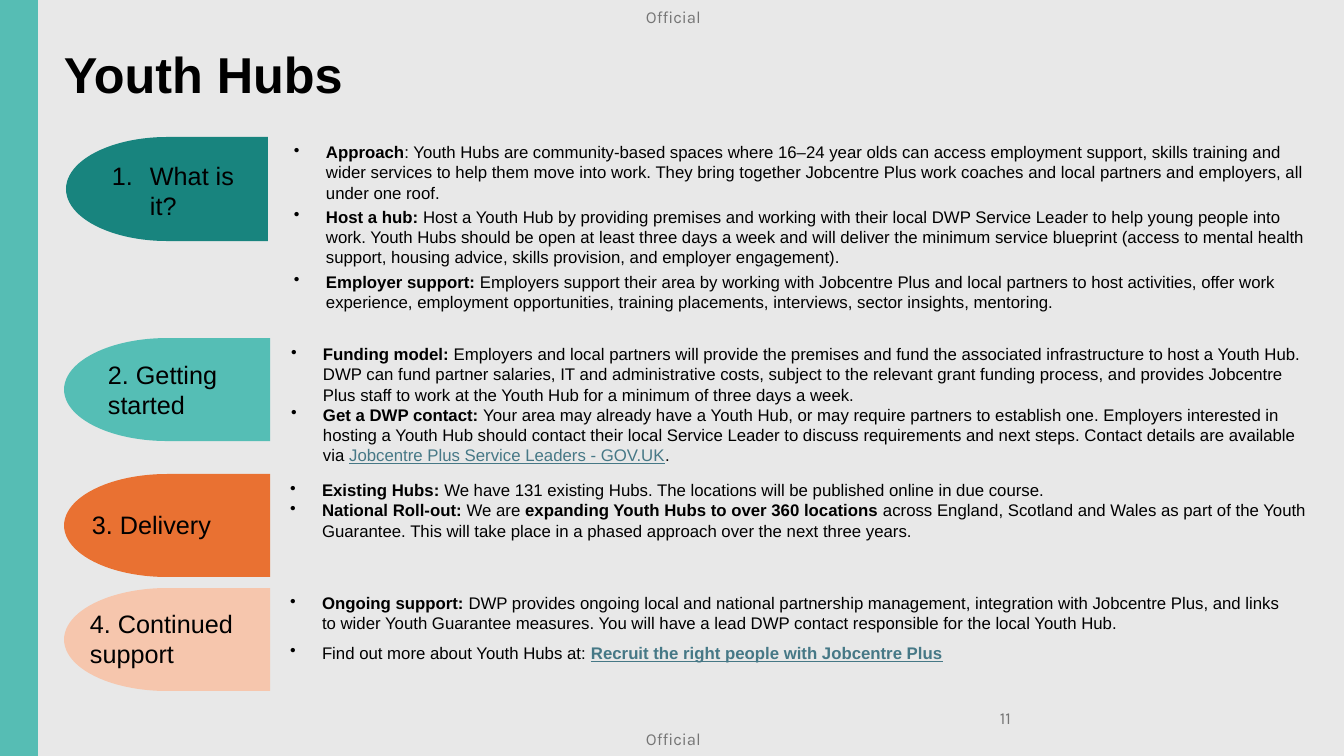
"""Build the Youth Hubs slide with its four labelled sections."""
from lxml.etree import SubElement
from pptx import Presentation
from pptx.dml.color import RGBColor
from pptx.enum.shapes import MSO_SHAPE
from pptx.enum.text import MSO_ANCHOR
from pptx.oxml.ns import qn
from pptx.util import Emu, Pt

PX = 914400 / 100.8
BACKGROUND = RGBColor(0xE8, 0xE8, 0xE8)
BLACK = RGBColor(0x00, 0x00, 0x00)
GREY = RGBColor(0x75, 0x75, 0x75)
LINK = RGBColor(0x46, 0x78, 0x86)
BAND = RGBColor(0x56, 0xBD, 0xB4)
DARK_TEAL = RGBColor(0x18, 0x84, 0x7E)
TEAL = RGBColor(0x55, 0xBE, 0xB5)
ORANGE = RGBColor(0xE9, 0x71, 0x32)
PEACH = RGBColor(0xF6, 0xC6, 0xAD)


def add_block(page, frame, color, kind=MSO_SHAPE.RECTANGLE):
    """Add a plain filled shape and return it."""
    block = page.shapes.add_shape(kind, *[Emu(round(n * PX)) for n in frame])
    block.shadow.inherit = False
    block.fill.solid()
    block.fill.fore_color.rgb = color
    block.line.fill.background()
    return block


def add_text(page, frame, paragraphs, size, font="Arial", color=BLACK, inset=(10, 5),
             bullet=None, indent=32, gap=0):
    """Add a text box whose paragraphs are lists of (text, style) spans."""
    box = page.shapes.add_textbox(*[Emu(round(n * PX)) for n in frame])
    text = box.text_frame
    text.word_wrap = True
    text.margin_left = text.margin_right = Emu(round(inset[0] * PX))
    text.margin_top = text.margin_bottom = Emu(round(inset[1] * PX))
    for index, spans in enumerate(paragraphs):
        para = text.paragraphs[0] if index == 0 else text.add_paragraph()
        if index and gap:
            para.space_before = Pt(gap)
        if bullet:
            properties = para._p.get_or_add_pPr()
            properties.set("marL", str(round(indent * PX)))
            properties.set("indent", str(-round(indent * PX)))
            tag, attribute, value = bullet
            SubElement(properties, qn(tag)).set(attribute, value)
        para.font.size = Pt(size)
        para.font.name = font
        para.font.color.rgb = color
        for words, style in spans:
            span = para.add_run()
            span.text = words
            if "bold" in style:
                span.font.bold = True
            if "link" in style:
                span.font.underline = True
                span.font.color.rgb = LINK
    return box


DOT = ("a:buChar", "char", "•")
NUMBER = ("a:buAutoNum", "type", "arabicPeriod")

sections = [
    {"tab": (66, 137, 202, 104), "color": DARK_TEAL,
     "label": "What is it?", "label_at": (102, 155, 162, 72), "bullet": NUMBER,
     "body_at": (284, 137, 1037, 119), "gap": 3,
     "body": [
         [("Approach", "bold"),
          (": Youth Hubs are community‑based spaces where 16–24 year olds can access employment "
           "support, skills training and wider services to help them move into work. They bring "
           "together Jobcentre Plus work coaches and local partners and employers, all under one "
           "roof.", "")],
         [("Host a hub: ", "bold"),
          ("Host a Youth Hub by providing premises and working with their local DWP Service Leader "
           "to help young people into work. Youth Hubs should be open at least three days a week "
           "and will deliver the minimum service blueprint (access to mental health support, "
           "housing advice, skills provision, and employer engagement).", "")],
         [("Employer support: ", "bold"),
          ("Employers support their area by working with Jobcentre Plus and local partners to host "
           "activities, offer work experience, employment opportunities, training placements, "
           "interviews, sector insights, mentoring.", "")],
     ]},
    {"tab": (64, 338, 206, 103), "color": TEAL,
     "label": "2. Getting started", "label_at": (98, 354, 162, 72), "bullet": None,
     "body_at": (281, 339, 1039, 132), "gap": 0,
     "body": [
         [("Funding model: ", "bold"),
          ("Employers and local partners will provide the premises and fund the associated "
           "infrastructure to host a Youth Hub. DWP can fund partner salaries, IT and "
           "administrative costs, subject to the relevant grant funding process, and provides "
           "Jobcentre Plus staff to work at the Youth Hub for a minimum of three days a week.", "")],
         [("Get a DWP contact: ", "bold"),
          ("Your area may already have a Youth Hub, or may require partners to establish one. "
           "Employers interested in hosting a Youth Hub should contact their local Service Leader "
           "to discuss requirements and next steps. Contact details are available via ", ""),
          ("Jobcentre Plus Service Leaders - GOV.UK", "link"), (".", "")],
     ]},
    {"tab": (64, 474, 206, 103), "color": ORANGE,
     "label": "3. Delivery", "label_at": (82, 504, 202, 40), "bullet": None,
     "body_at": (280, 475, 1044, 72), "gap": 0,
     "body": [
         [("Existing Hubs: ", "bold"),
          ("We have 131 existing Hubs. The locations will be published online in due course.", "")],
         [("National Roll-out: ", "bold"), ("We are ", ""),
          ("expanding Youth Hubs to over 360 locations ", "bold"),
          ("across England, Scotland and Wales as part of the Youth Guarantee. This will take "
           "place in a phased approach over the next three years.", "")],
     ]},
    {"tab": (64, 588, 206, 103), "color": PEACH,
     "label": "4. Continued support", "label_at": (80, 603, 202, 72), "bullet": None,
     "body_at": (280, 588, 1024, 82), "gap": 6.5,
     "body": [
         [("Ongoing support: ", "bold"),
          ("DWP provides ongoing local and national partnership management, integration with "
           "Jobcentre Plus, and links to wider Youth Guarantee measures. You will have a lead DWP "
           "contact responsible for the local Youth Hub.", "")],
         [("Find out more about Youth Hubs at: ", ""),
          ("Recruit the right people with Jobcentre Plus", "bold link")],
     ]},
]

deck = Presentation()
deck.slide_width = Emu(round(1344 * PX))
deck.slide_height = Emu(round(756 * PX))
page = deck.slides.add_slide(deck.slide_layouts[6])
page.background.fill.solid()
page.background.fill.fore_color.rgb = BACKGROUND

add_block(page, (0, 0, 38, 756), BAND)
for top in (7, 729):
    marking = add_text(page, (646, top, 56, 20), [[("Official", "")]], 12, "Karla", GREY, (0, 0))
    marking.text_frame.word_wrap = False
page_number = add_text(page, (995, 698, 313, 40), [[("11", "")]], 12, "Karla", GREY, (5, 5))
page_number.text_frame.vertical_anchor = MSO_ANCHOR.MIDDLE
add_text(page, (54, 38, 1267, 72), [[("Youth Hubs", "bold")]], 36)

for section in sections:
    tab = add_block(page, section["tab"], section["color"], MSO_SHAPE.FLOWCHART_DELAY)
    tab.rotation = 180
    add_text(page, section["label_at"], [[(section["label"], "")]], 18,
             bullet=section["bullet"], indent=38)
    add_text(page, section["body_at"], section["body"], 12, bullet=DOT, gap=section["gap"])

deck.save("out.pptx")
